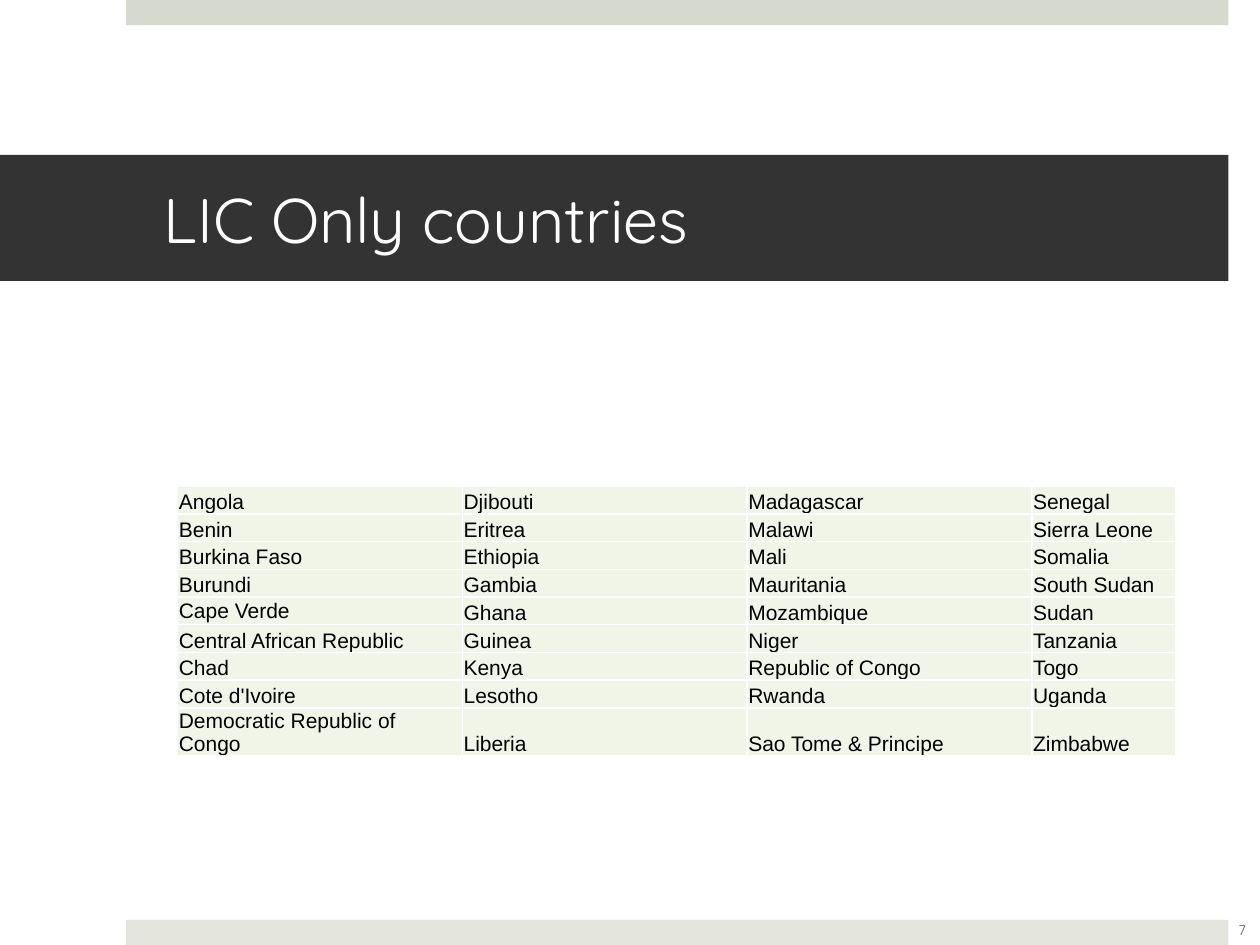
"""Build a slide listing the LIC Only countries in a four-column table."""
from lxml import etree
from pptx import Presentation
from pptx.dml.color import RGBColor
from pptx.enum.shapes import MSO_SHAPE
from pptx.enum.text import MSO_ANCHOR, PP_ALIGN
from pptx.oxml.ns import qn
from pptx.util import Inches, Pt

RECTANGLE = MSO_SHAPE.RECTANGLE
MIDDLE, BOTTOM = MSO_ANCHOR.MIDDLE, MSO_ANCHOR.BOTTOM
LEFT, CENTER = PP_ALIGN.LEFT, PP_ALIGN.CENTER

TITLE = "LIC Only countries"
PAGE_NUMBER = "7"
COUNTRY_COLUMNS = [
    ["Angola", "Benin", "Burkina Faso", "Burundi", "Cape Verde",
     "Central African Republic", "Chad", "Cote d'Ivoire",
     "Democratic Republic of Congo"],
    ["Djibouti", "Eritrea", "Ethiopia", "Gambia", "Ghana", "Guinea",
     "Kenya", "Lesotho", "Liberia"],
    ["Madagascar", "Malawi", "Mali", "Mauritania", "Mozambique", "Niger",
     "Republic of Congo", "Rwanda", "Sao Tome & Principe"],
    ["Senegal", "Sierra Leone", "Somalia", "South Sudan", "Sudan",
     "Tanzania", "Togo", "Uganda", "Zimbabwe"],
]
MIDDLE_ANCHORED = {"Cape Verde"}

COLORS = {
    "top_bar": "D6D9CD", "bottom_bar": "E4E6DE", "title_band": "333333",
    "title": "FFFFFF", "cell": "F0F5E8", "border": "FFFFFF",
    "country": "000000", "page_number": "595959",
}
FONTS = {
    "title": {"size": Pt(36), "name": "Quicksand"},
    "country": {"size": Pt(12), "name": "Arial"},
    "page_number": {"size": Pt(8), "name": "Quicksand"},
}
SLIDE_WIDTH, SLIDE_HEIGHT = 10, 7.5
BAR_LEFT, BAR_HEIGHT, BAND_RIGHT = 1, 0.2, 9.75
BAND_TOP, BAND_HEIGHT = 1.23, 1
TABLE_LEFT, TABLE_TOP = 1.41, 3.86
COLUMN_WIDTHS, ROW_HEIGHT = [2.26, 2.26, 2.26, 1.14], 0.22
TITLE_MARGINS = (1.3, 0.05, 0.3, 0.05)
CELL_MARGINS = (0.01, 0.01, 0.01, 0)
PAGE_NUMBER_BOX = (9.61, 7.18, 0.5, 0.4)


def color(role):
    return RGBColor.from_string(COLORS[role])


def set_margins(target, margins):
    for side, margin in zip(("left", "top", "right", "bottom"), margins):
        setattr(target, f"margin_{side}", Inches(margin))


def write(text_frame, text, role, alignment=LEFT):
    paragraph = text_frame.paragraphs[0]
    paragraph.alignment = alignment
    run = paragraph.add_run()
    run.text = text
    for attribute, value in FONTS[role].items():
        setattr(run.font, attribute, value)
    run.font.color.rgb = color(role)


def add_bar(slide, role, left, top, height):
    width = BAND_RIGHT - left
    bar = slide.shapes.add_shape(
        RECTANGLE, *map(Inches, (left, top, width, height)))
    bar.shadow.inherit = False
    bar.fill.solid()
    bar.fill.fore_color.rgb = color(role)
    bar.line.fill.background()
    return bar


def add_borders(cell):
    properties = cell._tc.get_or_add_tcPr()
    for side in "LRTB":
        line = etree.SubElement(properties, qn(f"a:ln{side}"), w=str(Pt(1)))
        fill = etree.SubElement(line, qn("a:solidFill"))
        etree.SubElement(fill, qn("a:srgbClr"), val=COLORS["border"])


def add_country_table(slide):
    rows = list(zip(*COUNTRY_COLUMNS))
    size = (sum(COLUMN_WIDTHS), ROW_HEIGHT * len(rows))
    table = slide.shapes.add_table(
        len(rows), len(COLUMN_WIDTHS),
        *map(Inches, (TABLE_LEFT, TABLE_TOP, *size))).table
    table.first_row = table.horz_banding = False
    for column, width in zip(table.columns, COLUMN_WIDTHS):
        column.width = Inches(width)
    for row, countries in zip(table.rows, rows):
        row.height = Inches(ROW_HEIGHT)
        for cell, country in zip(row.cells, countries):
            add_borders(cell)
            cell.fill.solid()
            cell.fill.fore_color.rgb = color("cell")
            set_margins(cell, CELL_MARGINS)
            cell.vertical_anchor = MIDDLE if country in MIDDLE_ANCHORED else BOTTOM
            write(cell.text_frame, country, "country")


def main():
    presentation = Presentation()
    presentation.slide_width = Inches(SLIDE_WIDTH)
    presentation.slide_height = Inches(SLIDE_HEIGHT)
    slide = presentation.slides.add_slide(presentation.slide_layouts[6])

    add_bar(slide, "top_bar", BAR_LEFT, 0, BAR_HEIGHT)
    add_bar(slide, "bottom_bar", BAR_LEFT, SLIDE_HEIGHT - BAR_HEIGHT, BAR_HEIGHT)

    title_frame = add_bar(slide, "title_band", 0, BAND_TOP, BAND_HEIGHT).text_frame
    title_frame.vertical_anchor = MIDDLE
    title_frame.word_wrap = True
    set_margins(title_frame, TITLE_MARGINS)
    write(title_frame, TITLE, "title")

    add_country_table(slide)

    number_frame = slide.shapes.add_textbox(*map(Inches, PAGE_NUMBER_BOX)).text_frame
    number_frame.word_wrap = True
    number_frame.vertical_anchor = MIDDLE
    write(number_frame, PAGE_NUMBER, "page_number", CENTER)

    presentation.save("out.pptx")


if __name__ == "__main__":
    main()
